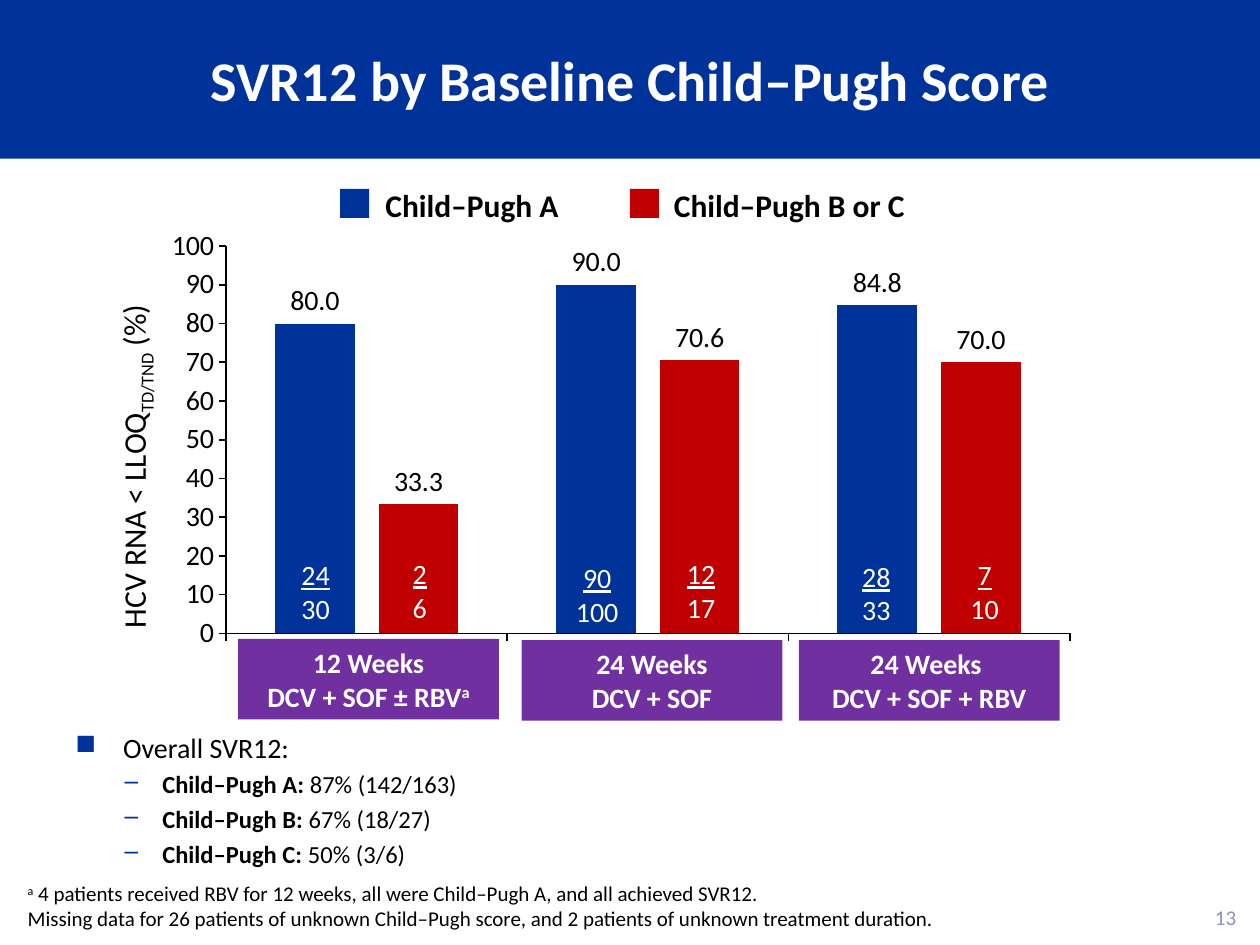
"""Build the slide on SVR12 by baseline Child–Pugh score."""
from dataclasses import dataclass

from lxml import etree
from pptx import Presentation
from pptx.chart import data as chart_data
from pptx.dml.color import RGBColor
from pptx.enum import chart as charts, shapes, text
from pptx.oxml import ns
from pptx.util import Inches, Pt

BLUE = RGBColor(0x00, 0x33, 0x99)
RED = RGBColor(0xC0, 0x00, 0x00)
PURPLE = RGBColor(0x70, 0x30, 0xA0)
GREY = RGBColor(0x8C, 0x90, 0xBA)
BLACK = RGBColor(0, 0, 0)
WHITE = RGBColor(0xFF, 0xFF, 0xFF)
FONT = "Calibri"
ALIGN = text.PP_ALIGN


@dataclass(frozen=True)
class Span:
    words: str
    bold: bool = False
    underline: bool = False
    baseline: int = 0


@dataclass(frozen=True)
class Box:
    left: float
    top: float
    width: float
    height: float

    def lengths(self) -> tuple:
        return tuple(Inches(n) for n in (self.left, self.top, self.width, self.height))


@dataclass(frozen=True)
class Style:
    size: float
    color: RGBColor = BLACK
    align: ALIGN = ALIGN.LEFT


@dataclass(frozen=True)
class LegendEntry:
    name: str
    color: RGBColor
    swatch_left: float
    label: Box


@dataclass(frozen=True)
class Fraction:
    responders: str
    patients: str
    box: Box


@dataclass(frozen=True)
class Regimen:
    weeks: str
    drugs: list
    left: float
    top: float


LEGEND = [
    LegendEntry("Child–Pugh A", BLUE, 2.7, Box(2.96, 1.43, 1.59, 0.4)),
    LegendEntry("Child–Pugh B or C", RED, 5, Box(5.25, 1.43, 2.05, 0.4)),
]
FRACTIONS = [
    Fraction("24", "30", Box(2.29, 4.38, 0.43, 0.64)),
    Fraction("2", "6", Box(3.17, 4.37, 0.32, 0.64)),
    Fraction("90", "100", Box(4.47, 4.4, 0.54, 0.64)),
    Fraction("12", "17", Box(5.35, 4.37, 0.43, 0.64)),
    Fraction("28", "33", Box(6.74, 4.39, 0.43, 0.64)),
    Fraction("7", "10", Box(7.6, 4.38, 0.43, 0.64)),
]
REGIMENS = [
    Regimen("12 Weeks", [Span("DCV + SOF ± RBV", True), Span("a", True, baseline=30000)], 1.89, 5.07),
    Regimen("24 Weeks", [Span("DCV + SOF", True)], 4.14, 5.08),
    Regimen("24 Weeks ", [Span("DCV + SOF + RBV", True)], 6.34, 5.08),
]
OVERALL = [("A", "87% (142/163)"), ("B", "67% (18/27)"), ("C", "50% (3/6)")]
FOOTNOTE = [
    [Span("a", baseline=30000),
     Span(" 4 patients received RBV for 12 weeks, all were Child–Pugh A, and all achieved SVR12.")],
    [Span("Missing data for 26 patients of unknown Child–Pugh score, and 2 patients of unknown treatment duration.")],
]


def write_paragraph(paragraph, spans: list, style: Style) -> None:
    paragraph.alignment = style.align
    for span in spans:
        run = paragraph.add_run()
        run.text = span.words
        font = run.font
        font.name, font.size = FONT, Pt(style.size)
        font.bold, font.underline = span.bold, span.underline
        font.color.rgb = style.color
        if span.baseline:
            run._r.get_or_add_rPr().set("baseline", str(span.baseline))


def write_lines(frame, lines: list, style: Style) -> None:
    for index, spans in enumerate(lines):
        paragraph = frame.add_paragraph() if index else frame.paragraphs[0]
        write_paragraph(paragraph, spans, style)


def add_text(slide, box: Box, lines: list, style: Style):
    frame = slide.shapes.add_textbox(*box.lengths()).text_frame
    frame.word_wrap = False
    write_lines(frame, lines, style)
    return frame


def add_rectangle(slide, box: Box, color: RGBColor):
    shape = slide.shapes.add_shape(shapes.MSO_SHAPE.RECTANGLE, *box.lengths())
    shape.shadow.inherit = False
    shape.fill.solid()
    shape.fill.fore_color.rgb = color
    shape.line.fill.background()
    return shape


def add_bullet(paragraph, symbol: str, margin: float, hanging: float) -> None:
    paragraph.space_after = Pt(3)
    properties = paragraph._p.get_or_add_pPr()
    properties.set("marL", str(Inches(margin)))
    properties.set("indent", str(-Inches(hanging)))
    color = etree.SubElement(properties, ns.qn("a:buClr"))
    etree.SubElement(color, ns.qn("a:srgbClr")).set("val", str(BLUE))
    etree.SubElement(properties, ns.qn("a:buChar")).set("char", symbol)


def set_layout(parent, index: int, **values) -> None:
    for old in parent.findall(ns.qn("c:layout")):
        parent.remove(old)
    layout = etree.Element(ns.qn("c:layout"))
    manual = etree.SubElement(layout, ns.qn("c:manualLayout"))
    for name, value in values.items():
        etree.SubElement(manual, ns.qn(f"c:{name}")).set("val", str(value))
    parent.insert(index, layout)


def style_axis(axis) -> None:
    axis.has_major_gridlines = False
    axis.format.line.color.rgb = BLACK
    axis.format.line.width = Pt(1)
    axis.major_tick_mark = charts.XL_TICK_MARK.OUTSIDE
    axis.tick_labels.font.size = Pt(16)
    axis.tick_labels.font.color.rgb = BLACK


def add_response_chart(slide) -> None:
    data = chart_data.CategoryChartData(number_format="0.0")
    data.categories = ["1", "2", "3"]
    data.add_series("Child–Pugh A", (80, 90, 84.8))
    data.add_series("Child–Pugh B or C", (33.3, 70.6, 70))
    box = Box(-0.08, 1.59, 9.47, 4.43)
    chart = slide.shapes.add_chart(charts.XL_CHART_TYPE.COLUMN_CLUSTERED, *box.lengths(), data).chart
    chart.has_legend = chart.has_title = False
    chart.font.name, chart.font.size = FONT, Pt(18)
    plot = chart.plots[0]
    plot.gap_width, plot.overlap, plot.vary_by_categories = 123, -30, False
    for series, color in zip(plot.series, (BLUE, RED)):
        series.format.fill.solid()
        series.format.fill.fore_color.rgb = color
        labels = series.data_labels
        labels.show_value = True
        labels.position = charts.XL_LABEL_POSITION.OUTSIDE_END
        labels.number_format, labels.number_format_is_linked = "0.0", False
        labels.font.size = Pt(16)
        labels.font.color.rgb = BLACK
    style_axis(chart.category_axis)
    chart.category_axis.tick_label_position = charts.XL_TICK_LABEL_POSITION.NONE
    axis = chart.value_axis
    style_axis(axis)
    axis.minimum_scale, axis.maximum_scale, axis.major_unit = 0, 100, 10
    axis.tick_labels.number_format, axis.tick_labels.number_format_is_linked = "0", False
    frame = axis.axis_title.text_frame
    spans = [Span("HCV RNA < LLOQ"), Span("TD/TND", baseline=-25000), Span(" (%)")]
    write_paragraph(frame.paragraphs[0], spans, Style(18, align=ALIGN.CENTER))
    frame._txBody.bodyPr.set("rot", "-5400000")
    frame._txBody.bodyPr.set("vert", "horz")
    set_layout(axis.axis_title._element, 1, xMode="edge", yMode="edge", x=0.1, y=0.18)
    set_layout(plot._element.getparent(), 0, layoutTarget="inner", xMode="edge", yMode="edge",
               x=0.198, y=0.082, w=0.707, h=0.694)


def add_title(slide) -> None:
    title = slide.shapes.title
    title.left, title.top, title.width, title.height = Box(0, 0, 10, 1.26).lengths()
    title.fill.solid()
    title.fill.fore_color.rgb = BLUE
    title.text_frame.vertical_anchor = text.MSO_ANCHOR.MIDDLE
    write_lines(title.text_frame, [[Span("SVR12 by Baseline Child–Pugh Score", True)]],
                Style(32, WHITE, ALIGN.CENTER))


def add_overall(slide) -> None:
    frame = add_text(slide, Box(0.5, 5.75, 9.17, 1.24), [[Span("Overall SVR12:")]], Style(16))
    frame.word_wrap = True
    add_bullet(frame.paragraphs[0], "■", 0.38, 0.38)
    for score, rate in OVERALL:
        paragraph = frame.add_paragraph()
        paragraph.level = 1
        write_paragraph(paragraph, [Span(f"Child–Pugh {score}:", True), Span(f" {rate}")], Style(14))
        add_bullet(paragraph, "–", 0.69, 0.3)


def main() -> None:
    presentation = Presentation()
    presentation.slide_width, presentation.slide_height = Inches(10), Inches(7.5)
    slide = presentation.slides.add_slide(presentation.slide_layouts[5])
    add_title(slide)
    add_text(slide, Box(9.54, 7.13, 0.37, 0.3), [[Span("13")]], Style(12, GREY, ALIGN.RIGHT))
    footnote = add_text(slide, Box(0.22, 6.99, 7.23, 0.4), FOOTNOTE, Style(12))
    footnote.margin_left = footnote.margin_right = footnote.margin_top = footnote.margin_bottom = 0
    footnote.vertical_anchor = text.MSO_ANCHOR.BOTTOM
    add_response_chart(slide)
    for entry in LEGEND:
        add_rectangle(slide, Box(entry.swatch_left, 1.5, 0.23, 0.23), entry.color)
        add_text(slide, entry.label, [[Span(entry.name, True)]], Style(18))
    centred = Style(16, WHITE, ALIGN.CENTER)
    for fraction in FRACTIONS:
        lines = [[Span(fraction.responders, underline=True)], [Span(fraction.patients)]]
        add_text(slide, fraction.box, lines, centred)
    for regimen in REGIMENS:
        shape = add_rectangle(slide, Box(regimen.left, regimen.top, 2.07, 0.64), PURPLE)
        write_lines(shape.text_frame, [[Span(regimen.weeks, True)], regimen.drugs], centred)
    add_overall(slide)
    presentation.save("out.pptx")


if __name__ == "__main__":
    main()
